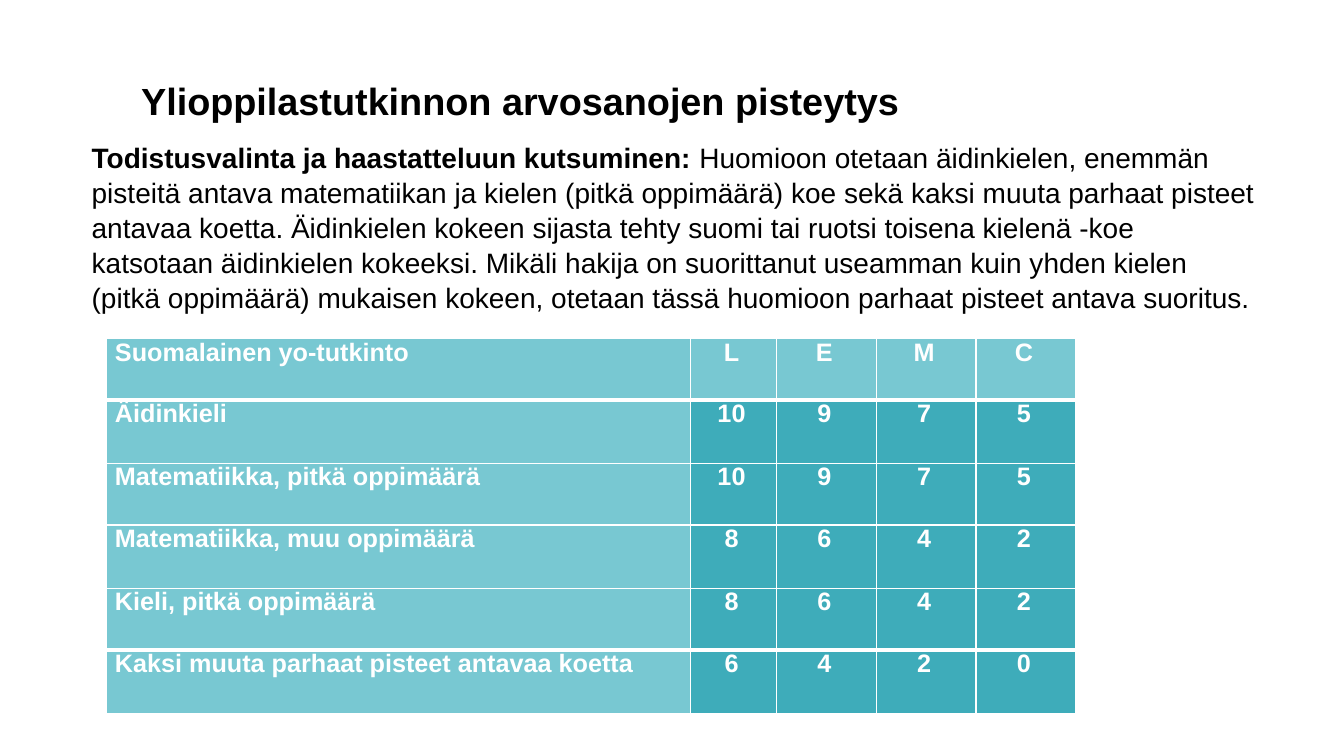
"""Build the slide on how matriculation examination grades are scored."""
from dataclasses import dataclass

from lxml import etree
from pptx import Presentation
from pptx.dml.color import RGBColor
from pptx.enum.text import MSO_ANCHOR, MSO_AUTO_SIZE, PP_ALIGN
from pptx.oxml.ns import qn
from pptx.util import Inches, Pt

BLACK = RGBColor(0x00, 0x00, 0x00)
WHITE = RGBColor(0xFF, 0xFF, 0xFF)
LIGHT_TEAL = RGBColor(0x78, 0xC8, 0xD2)
TEAL = RGBColor(0x3E, 0xAC, 0xBA)

LEFT = PP_ALIGN.LEFT
CENTER = PP_ALIGN.CENTER
JUSTIFY = PP_ALIGN.JUSTIFY
BOTTOM = MSO_ANCHOR.BOTTOM
TOP = MSO_ANCHOR.TOP
NO_AUTOFIT = MSO_AUTO_SIZE.NONE

FONT = "Arial"
SLIDE_WIDTH = Inches(13.33)
SLIDE_HEIGHT = Inches(7.5)
COLUMN_SHARES = (43.51, 6.38, 7.43, 7.43, 7.43)
ROW_SHARES = (8.13, 8.4) * 3
THIN, THICK = 1, 3


@dataclass(frozen=True)
class Frame:
    """Place and size in percent of the slide."""

    left: float
    top: float
    width: float
    height: float

    def lengths(self) -> tuple[int, int, int, int]:
        """Return left, top, width and height as lengths."""
        return across(self.left), down(self.top), across(self.width), down(self.height)


@dataclass(frozen=True)
class ScoreRow:
    """One table row: a subject and its entry for each grade."""

    subject: str
    entries: tuple[str, ...]


TITLE_FRAME = Frame(9.75, 9.73, 90, 7.33)
BODY_FRAME = Frame(6.08, 17.73, 88.52, 76.93)
TABLE_FRAME = Frame(7.88, 44.8, sum(COLUMN_SHARES), sum(ROW_SHARES))

TITLE = "Ylioppilastutkinnon arvosanojen pisteytys"
LEAD = "Todistusvalinta ja haastatteluun kutsuminen: "
BODY = (
    "Huomioon otetaan äidinkielen, enemmän pisteitä antava matematiikan ja kielen "
    "(pitkä oppimäärä) koe sekä kaksi muuta parhaat pisteet antavaa koetta. "
    "Äidinkielen kokeen sijasta tehty suomi tai ruotsi toisena kielenä -koe "
    "katsotaan äidinkielen kokeeksi. Mikäli hakija on suorittanut useamman kuin "
    "yhden kielen (pitkä oppimäärä) mukaisen kokeen, otetaan tässä huomioon "
    "parhaat pisteet antava suoritus."
)
SCORE_ROWS = (
    ScoreRow("Suomalainen yo-tutkinto", ("L", "E", "M", "C")),
    ScoreRow("Äidinkieli", ("10", "9", "7", "5")),
    ScoreRow("Matematiikka, pitkä oppimäärä", ("10", "9", "7", "5")),
    ScoreRow("Matematiikka, muu oppimäärä", ("8", "6", "4", "2")),
    ScoreRow("Kieli, pitkä oppimäärä", ("8", "6", "4", "2")),
    ScoreRow("Kaksi muuta parhaat pisteet antavaa koetta", ("6", "4", "2", "0")),
)


def across(share: float) -> int:
    """Turn a percentage of the slide width into a length."""
    return round(SLIDE_WIDTH * share / 100)


def down(share: float) -> int:
    """Turn a percentage of the slide height into a length."""
    return round(SLIDE_HEIGHT * share / 100)


def place(shape, frame: Frame) -> None:
    """Move and size a shape to its frame."""
    shape.left, shape.top, shape.width, shape.height = frame.lengths()


def write_text(text_frame, text: str, *, size: float, color: RGBColor = BLACK,
               bold: bool = True, alignment=LEFT, spacing: float = 1.0) -> None:
    """Add a formatted run to the first paragraph of a text frame."""
    paragraph = text_frame.paragraphs[0]
    paragraph.alignment = alignment
    paragraph.line_spacing = spacing
    paragraph.space_before = Pt(0)
    run = paragraph.add_run()
    run.text = text
    run.font.name = FONT
    run.font.size = Pt(size)
    run.font.bold = bold
    run.font.color.rgb = color


def set_borders(cell, top: float, bottom: float) -> None:
    """Draw white cell borders with the given top and bottom widths."""
    properties = cell._tc.get_or_add_tcPr()
    widths = {"a:lnL": THIN, "a:lnR": THIN, "a:lnT": top, "a:lnB": bottom}
    for position, (tag, width) in enumerate(widths.items()):
        line = etree.Element(qn(tag), w=str(Pt(width)))
        fill = etree.SubElement(line, qn("a:solidFill"))
        etree.SubElement(fill, qn("a:srgbClr"), val=str(WHITE))
        properties.insert(position, line)


def format_cell(cell, text: str, row: int, column: int) -> None:
    """Write, fill and border one cell by its place in the table."""
    last = len(SCORE_ROWS) - 1
    is_label = row == 0 or column == 0
    cell.fill.solid()
    cell.fill.fore_color.rgb = LIGHT_TEAL if is_label else TEAL
    cell.margin_left = cell.margin_top = cell.margin_bottom = 0
    cell.margin_right = Pt(9.4) if column else 0
    cell.vertical_anchor = TOP
    write_text(cell.text_frame, text, size=18, color=WHITE,
               alignment=CENTER if column else JUSTIFY, spacing=0.99)
    cell.text_frame.paragraphs[0]._p.get_or_add_pPr().set("marL", str(Pt(6.5)))
    set_borders(cell, THICK if row in (1, last) else THIN,
                THICK if row in (0, last - 1) else THIN)


def add_score_table(slide) -> None:
    """Add the table of points for each subject and grade."""
    shape = slide.shapes.add_table(len(ROW_SHARES), len(COLUMN_SHARES),
                                   *TABLE_FRAME.lengths())
    table = shape.table
    table.first_row = table.horz_banding = False
    for column, share in zip(table.columns, COLUMN_SHARES):
        column.width = across(share)
    for row, share in zip(table.rows, ROW_SHARES):
        row.height = down(share)
    for row, score_row in enumerate(SCORE_ROWS):
        for column, text in enumerate((score_row.subject, *score_row.entries)):
            format_cell(table.cell(row, column), text, row, column)


def main() -> None:
    """Build and save the presentation."""
    presentation = Presentation()
    presentation.slide_width = SLIDE_WIDTH
    presentation.slide_height = SLIDE_HEIGHT
    slide = presentation.slides.add_slide(presentation.slide_layouts.get_by_name("Title Only"))

    body = slide.shapes.add_textbox(*BODY_FRAME.lengths()).text_frame
    body.word_wrap = True
    write_text(body, LEAD, size=20, spacing=1.04)
    write_text(body, BODY, size=20, bold=False, spacing=1.04)

    title = slide.shapes.title
    place(title, TITLE_FRAME)
    title.text_frame.auto_size = NO_AUTOFIT
    title.text_frame.vertical_anchor = BOTTOM
    write_text(title.text_frame, TITLE, size=27, spacing=0.9)

    add_score_table(slide)
    presentation.save("out.pptx")


if __name__ == "__main__":
    main()
